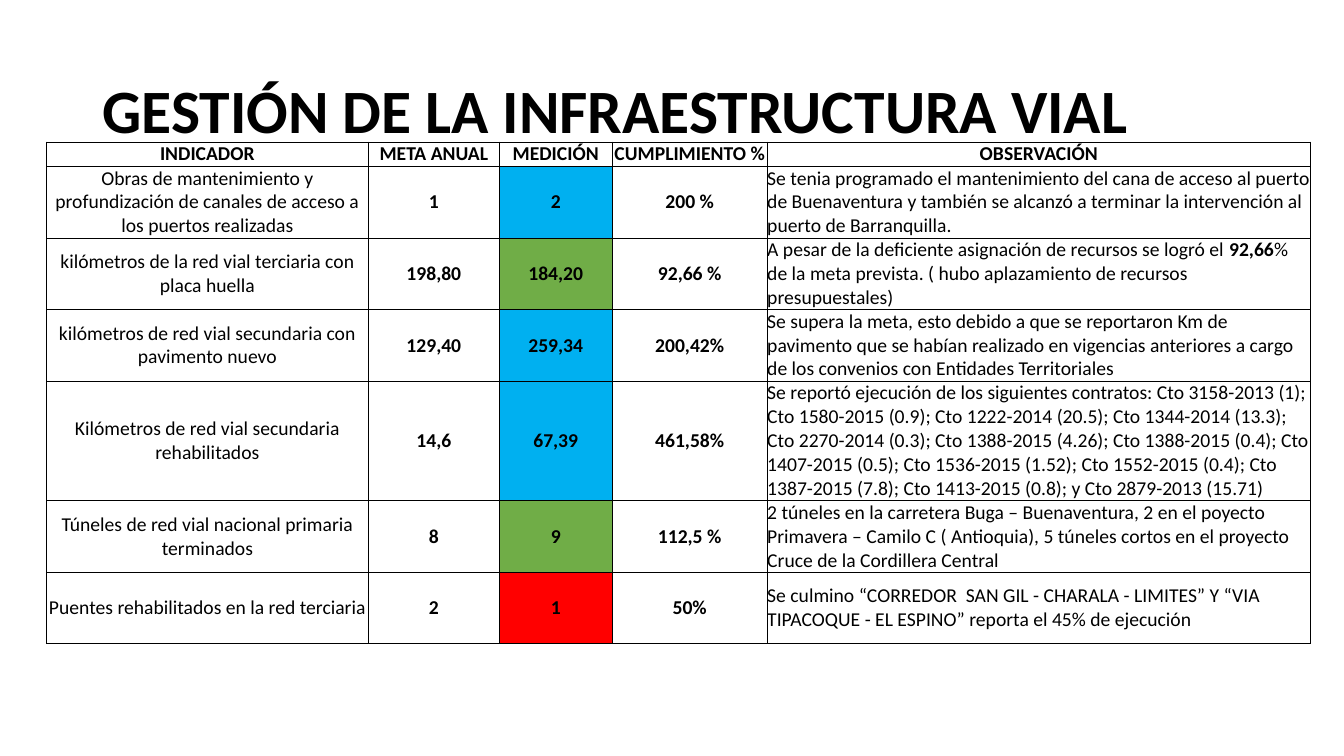
import pptx
import pptx.util
import pptx.dml.color
import pptx.enum.text
import pptx.oxml.ns
import lxml.etree

Pt = pptx.util.Pt
Align = pptx.enum.text.PP_ALIGN
Middle = pptx.enum.text.MSO_ANCHOR.MIDDLE

BLACK, WHITE = "000000", "FFFFFF"
BLUE, GREEN, RED = "00B0F0", "70AD47", "FF0000"

WIDTHS = [230, 93.5, 80.7, 110.7, 388]
HEIGHTS = [17.3, 51, 51, 51, 85.5, 51, 51]
HEADS = ["INDICADOR", "META ANUAL", "MEDICIÓN", "CUMPLIMIENTO %", "OBSERVACIÓN"]

# Indicator, yearly goal, measure, its colour, compliance, remark
# (a remark in several pieces has every second piece in bold)
ROWS = [
    ("Obras de mantenimiento y profundización de canales de acceso a los puertos realizadas",
     "1", "2", BLUE, "200 %",
     ["Se tenia programado el mantenimiento del cana de acceso al puerto de Buenaventura "
      "y también se alcanzó a terminar la intervención al puerto de Barranquilla."]),
    ("kilómetros de la red vial terciaria con placa huella",
     "198,80", "184,20", GREEN, "92,66 %",
     ["A pesar de la deficiente asignación de recursos se logró el ", "92,66",
      "% de la meta prevista. ( hubo aplazamiento de recursos presupuestales)"]),
    ("kilómetros de red vial secundaria con pavimento nuevo",
     "129,40", "259,34", BLUE, "200,42%",
     ["Se supera la meta, esto debido a que se reportaron Km de pavimento que se habían "
      "realizado en vigencias anteriores a cargo de los convenios con Entidades Territoriales"]),
    ("Kilómetros de red vial secundaria rehabilitados",
     "14,6", "67,39", BLUE, "461,58%",
     ["Se reportó ejecución de los siguientes contratos: Cto 3158-2013 (1); "
      "Cto 1580-2015 (0.9); Cto 1222-2014 (20.5); Cto 1344-2014 (13.3); "
      "Cto 2270-2014 (0.3); Cto 1388-2015 (4.26); Cto 1388-2015 (0.4); "
      "Cto 1407-2015 (0.5); Cto 1536-2015 (1.52); Cto 1552-2015 (0.4); "
      "Cto 1387-2015 (7.8); Cto 1413-2015 (0.8); y Cto 2879-2013 (15.71)"]),
    ("Túneles de red vial nacional primaria terminados",
     "8", "9", GREEN, "112,5 %",
     ["2 túneles en la carretera Buga – Buenaventura, 2 en el poyecto Primavera – Camilo C "
      "( Antioquia), 5 túneles cortos en el proyecto Cruce de la Cordillera Central"]),
    ("Puentes rehabilitados en la red terciaria",
     "2", "1", RED, "50%",
     ["Se culmino “CORREDOR  SAN GIL - CHARALA - LIMITES” Y “VIA TIPACOQUE - EL ESPINO” "
      "reporta el 45% de ejecución"]),
]


def tint(code):
    return pptx.dml.color.RGBColor.from_string(code)


def write(frame, parts, size=14, bold=False, align=Align.CENTER, space=1.0):
    """Write one paragraph; every second part has the opposite weight."""
    frame.word_wrap = True
    para = frame.paragraphs[0]
    para.alignment = align
    para.line_spacing = space
    for i, part in enumerate(parts):
        run = para.add_run()
        run.text = part
        font = run.font
        font.name, font.size = "Calibri", Pt(size)
        font.bold = bold != (i % 2 == 1)
        font.color.rgb = tint(BLACK)


def edge(cell, top):
    """Rule the four sides of a cell."""
    props = cell._tc.get_or_add_tcPr()
    qn = pptx.oxml.ns.qn
    for side in "LRTB":
        wide = top if side == "T" else 0.5
        line = lxml.etree.SubElement(props, qn("a:ln" + side), w=str(Pt(wide)))
        fill = lxml.etree.SubElement(line, qn("a:solidFill"))
        lxml.etree.SubElement(fill, qn("a:srgbClr"), val=BLACK)


def fill_cell(cell, parts, fill=None, top=0.5, **form):
    cell.margin_left = cell.margin_right = cell.margin_top = cell.margin_bottom = 0
    cell.vertical_anchor = Middle
    edge(cell, top)
    if fill:
        cell.fill.solid()
        cell.fill.fore_color.rgb = tint(fill)
    else:
        cell.fill.background()
    write(cell.text_frame, parts, **form)


def add_title(slide, left, top, width, height):
    title = slide.shapes.title
    title.left, title.top = Pt(left), Pt(top)
    title.width, title.height = Pt(width), Pt(height)
    frame = title.text_frame
    frame.auto_size = pptx.enum.text.MSO_AUTO_SIZE.NONE
    frame.vertical_anchor = Middle
    write(frame, ["GESTIÓN DE LA INFRAESTRUCTURA VIAL"],
          size=44, bold=True, align=Align.LEFT, space=0.9)


def add_grid(slide, left, top):
    table = slide.shapes.add_table(
        len(HEIGHTS), len(WIDTHS), Pt(left), Pt(top),
        Pt(sum(WIDTHS)), Pt(sum(HEIGHTS))).table
    table.first_row = table.horz_banding = False
    for col, width in zip(table.columns, WIDTHS):
        col.width = Pt(width)
    for row, height in zip(table.rows, HEIGHTS):
        row.height = Pt(height)
    # Header row
    for c, head in enumerate(HEADS):
        fill_cell(table.cell(0, c), [head], top=1, bold=True)
    # One row for each indicator
    for r, (name, goal, value, shade, rate, note) in enumerate(ROWS, 1):
        fill_cell(table.cell(r, 0), [name])
        fill_cell(table.cell(r, 1), [goal], bold=True)
        fill_cell(table.cell(r, 2), [value], fill=shade, bold=True)
        fill_cell(table.cell(r, 3), [rate], bold=True)
        fill_cell(table.cell(r, 4), note, fill=WHITE, align=Align.LEFT)


def main():
    deck = pptx.Presentation()
    deck.slide_width, deck.slide_height = Pt(960), Pt(540)
    slide = deck.slides.add_slide(deck.slide_layouts[5])
    add_title(slide, 66, 28.8, 828, 104.4)
    add_grid(slide, 33.2, 101.5)
    deck.save("out.pptx")


if __name__ == "__main__":
    main()
